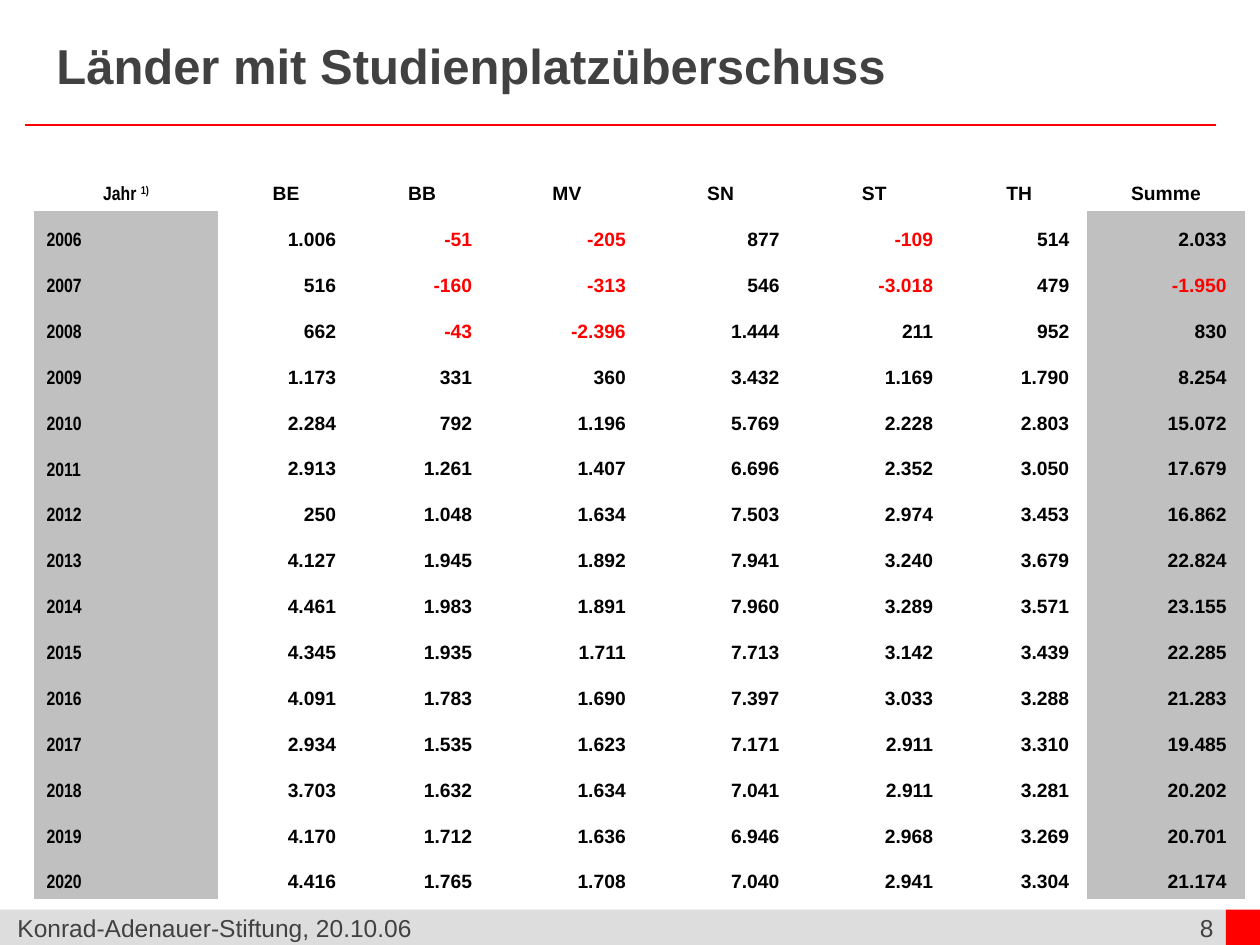
from dataclasses import dataclass
from typing import NamedTuple

from lxml.etree import SubElement
from pptx import Presentation
from pptx.dml.color import RGBColor
from pptx.enum.shapes import MSO_CONNECTOR, MSO_SHAPE
from pptx.enum.text import MSO_ANCHOR as Anchor, PP_ALIGN as Align
from pptx.oxml.ns import qn
from pptx.util import Emu, Inches, Pt


@dataclass(frozen=True)
class Theme:
    text: RGBColor = RGBColor(0x41, 0x41, 0x41)
    figure: RGBColor = RGBColor(0, 0, 0)
    accent: RGBColor = RGBColor(0xFF, 0, 0)
    footer_fill: RGBColor = RGBColor(0xDD, 0xDD, 0xDD)
    column_fill: RGBColor = RGBColor(0xC0, 0xC0, 0xC0)
    font: str = "Arial"
    narrow_font: str = "Arial Narrow"
    title_size: int = 28
    footer_size: int = 14
    table_size: int = 11


class Area(NamedTuple):
    """Left, top, width and height in percent of the slide."""
    left: float
    top: float
    width: float
    height: float


class Label(NamedTuple):
    text: str
    area: Area
    size: int
    bold: bool = False
    align: Align = Align.LEFT
    anchor: Anchor = Anchor.TOP


class Block(NamedTuple):
    area: Area
    fill: RGBColor


THEME = Theme()
SLIDE_WIDTH, SLIDE_HEIGHT = Inches(10), Inches(7.5)
NO_GRID_STYLE = "{2D5ABB26-0587-4C30-8999-92F81FD0307C}"

BLOCKS = (
    Block(Area(0, 96.27, 97.6, 3.73), THEME.footer_fill),
    Block(Area(97.3, 96.27, 3, 4), THEME.accent),
)
TITLE_RULE = Area(2, 13.2, 94.5, 0)
LABELS = (
    Label("8", Area(88.6, 96, 8.7, 4.4), THEME.footer_size, align=Align.RIGHT),
    Label("Konrad-Adenauer-Stiftung, 20.10.06", Area(0.4, 96, 88.6, 7.6), THEME.footer_size),
    Label("Länder mit Studienplatzüberschuss", Area(3.5, 2.8, 76.6, 8.13),
          THEME.title_size, bold=True, anchor=Anchor.MIDDLE),
)

TABLE_LEFT, TABLE_TOP, ROW_HEIGHT = 2.7, 17.47, 4.86
COLUMN_WIDTHS = (14.6, 10.8, 10.8, 12.2, 12.2, 12.2, 10.8, 12.5)
HEADINGS = ("Jahr ", "BE", "BB", "MV", "SN", "ST", "TH", "Summe")
FOOTNOTE_MARK = "1)"
FIRST_YEAR = 2006
SURPLUS = (
    (1006, -51, -205, 877, -109, 514, 2033),
    (516, -160, -313, 546, -3018, 479, -1950),
    (662, -43, -2396, 1444, 211, 952, 830),
    (1173, 331, 360, 3432, 1169, 1790, 8254),
    (2284, 792, 1196, 5769, 2228, 2803, 15072),
    (2913, 1261, 1407, 6696, 2352, 3050, 17679),
    (250, 1048, 1634, 7503, 2974, 3453, 16862),
    (4127, 1945, 1892, 7941, 3240, 3679, 22824),
    (4461, 1983, 1891, 7960, 3289, 3571, 23155),
    (4345, 1935, 1711, 7713, 3142, 3439, 22285),
    (4091, 1783, 1690, 7397, 3033, 3288, 21283),
    (2934, 1535, 1623, 7171, 2911, 3310, 19485),
    (3703, 1632, 1634, 7041, 2911, 3281, 20202),
    (4170, 1712, 1636, 6946, 2968, 3269, 20701),
    (4416, 1765, 1708, 7040, 2941, 3304, 21174),
)


def across(percent: float) -> Emu:
    return Emu(round(SLIDE_WIDTH * percent / 100))


def down(percent: float) -> Emu:
    return Emu(round(SLIDE_HEIGHT * percent / 100))


def place(area: Area) -> tuple[Emu, Emu, Emu, Emu]:
    return across(area.left), down(area.top), across(area.width), down(area.height)


def style(paragraph, size: int, color: RGBColor, bold: bool, align: Align,
          font: str = THEME.font) -> None:
    paragraph.alignment = align
    paragraph.font.name = font
    paragraph.font.size = Pt(size)
    paragraph.font.bold = bold
    paragraph.font.color.rgb = color


def draw_block(slide, block: Block) -> None:
    bar = slide.shapes.add_shape(MSO_SHAPE.RECTANGLE, *place(block.area))
    bar.shadow.inherit = False
    bar.fill.solid()
    bar.fill.fore_color.rgb = block.fill
    bar.line.fill.background()


def draw_rule(slide, area: Area) -> None:
    left, top, width, height = place(area)
    rule = slide.shapes.add_connector(MSO_CONNECTOR.STRAIGHT, left, top, left + width, top + height)
    rule.line.color.rgb = THEME.accent
    rule.line.width = Pt(1)
    SubElement(rule._element.spPr, qn("a:effectLst"))


def draw_label(slide, label: Label) -> None:
    frame = slide.shapes.add_textbox(*place(label.area)).text_frame
    frame.word_wrap = True
    frame.vertical_anchor = label.anchor
    paragraph = frame.paragraphs[0]
    paragraph.text = label.text
    style(paragraph, label.size, THEME.text, label.bold, label.align)


def fill_cell(cell, text: str, align: Align, shaded: bool = False,
              font: str = THEME.font, color: RGBColor = THEME.figure) -> None:
    cell.vertical_anchor = Anchor.BOTTOM
    if shaded:
        cell.fill.solid()
        cell.fill.fore_color.rgb = THEME.column_fill
    else:
        cell.fill.background()
    paragraph = cell.text_frame.paragraphs[0]
    paragraph.text = text
    style(paragraph, THEME.table_size, color, True, align, font)


def draw_surplus_table(slide) -> None:
    rows, columns = len(SURPLUS) + 1, len(HEADINGS)
    area = Area(TABLE_LEFT, TABLE_TOP, sum(COLUMN_WIDTHS), rows * ROW_HEIGHT)
    table = slide.shapes.add_table(rows, columns, *place(area)).table
    table.first_row = table.horz_banding = False
    table._tbl.tblPr.find(qn("a:tableStyleId")).text = NO_GRID_STYLE
    for column, width in zip(table.columns, COLUMN_WIDTHS):
        column.width = across(width)
    for row in table.rows:
        row.height = down(ROW_HEIGHT)

    for column, heading in enumerate(HEADINGS):
        font = THEME.font if column else THEME.narrow_font
        fill_cell(table.cell(0, column), heading, Align.CENTER, font=font)
    mark = table.cell(0, 0).text_frame.paragraphs[0].add_run()
    mark.text = FOOTNOTE_MARK
    mark.font._element.set("baseline", "30000")

    for row, values in enumerate(SURPLUS, start=1):
        year = str(FIRST_YEAR + row - 1)
        fill_cell(table.cell(row, 0), year, Align.LEFT, True, THEME.narrow_font)
        for column, value in enumerate(values, start=1):
            fill_cell(table.cell(row, column), f"{value:,} ".replace(",", "."), Align.RIGHT,
                      shaded=column == columns - 1,
                      color=THEME.accent if value < 0 else THEME.figure)


def main() -> None:
    deck = Presentation()
    deck.slide_width, deck.slide_height = SLIDE_WIDTH, SLIDE_HEIGHT
    slide = deck.slides.add_slide(deck.slide_layouts[6])
    for block in BLOCKS:
        draw_block(slide, block)
    draw_rule(slide, TITLE_RULE)
    for label in LABELS:
        draw_label(slide, label)
    draw_surplus_table(slide)
    deck.save("out.pptx")


if __name__ == "__main__":
    main()
